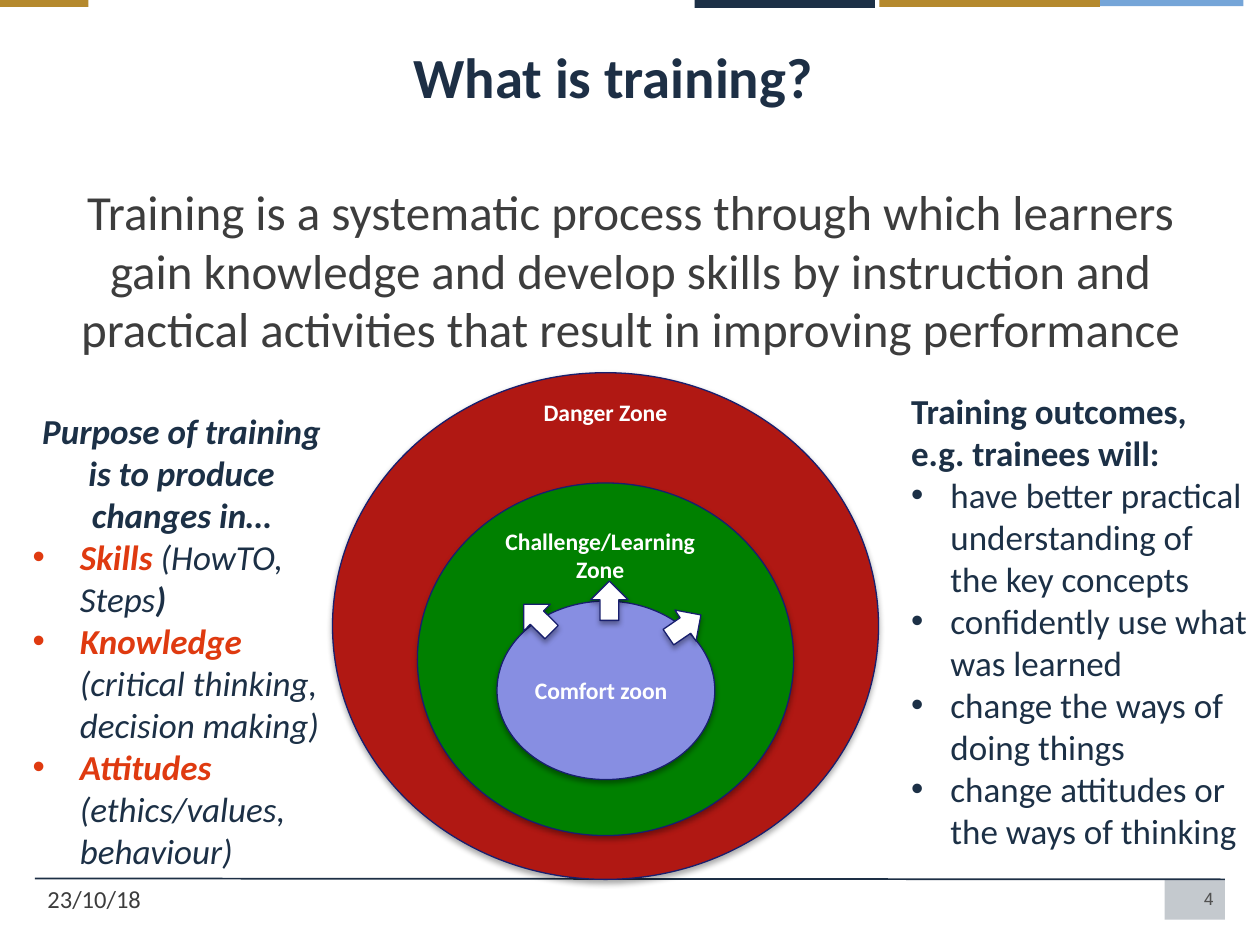
from collections import namedtuple
from dataclasses import dataclass

from lxml import etree
from pptx import Presentation
from pptx.dml.color import RGBColor
from pptx.enum.shapes import MSO_CONNECTOR, MSO_SHAPE
from pptx.enum.text import MSO_ANCHOR, PP_ALIGN
from pptx.oxml.ns import qn
from pptx.util import Pt

RECTANGLE, OVAL, ARROW = MSO_SHAPE.RECTANGLE, MSO_SHAPE.OVAL, MSO_SHAPE.RIGHT_ARROW
STRAIGHT = MSO_CONNECTOR.STRAIGHT
LEFT, CENTER, RIGHT = PP_ALIGN.LEFT, PP_ALIGN.CENTER, PP_ALIGN.RIGHT
TOP, MIDDLE = MSO_ANCHOR.TOP, MSO_ANCHOR.MIDDLE

Box = namedtuple("Box", "left top width height")
Span = namedtuple("Span", "text color bold italic", defaults=(False, False))


@dataclass(frozen=True)
class Theme:
    """Colours, fonts and type sizes of the slide."""
    font: str = "Calibri"
    number_font: str = "Roboto"
    navy: str = "1D2F45"
    ink: str = "1C3046"
    gold: str = "B5892D"
    sky: str = "75A5D8"
    body: str = "3D3D3D"
    gray: str = "515151"
    accent: str = "DF3A10"
    outline: str = "181F6E"
    danger: str = "B01813"
    challenge: str = "008000"
    comfort: str = "878EE2"
    white: str = "FFFFFF"
    title_size: float = 32.4
    body_size: float = 28
    list_size: float = 20
    date_size: float = 14
    label_size: float = 13.5
    number_size: float = 9.8


THEME = Theme()


def rgb(color):
    """Turn a hex string into a colour."""
    return RGBColor.from_string(color)


def within(box, left, top, width, height):
    """Give a box placed relative to the corner of another."""
    return Box(box.left + left, box.top + top, width, height)


def set_alpha(color_element, percent):
    """Make a colour element partly transparent."""
    etree.SubElement(color_element, qn("a:alpha"), val=str(percent * 1000))


def add_shape(page, kind, box, color, outlined=False):
    """Add a filled preset shape, outlined with a soft shadow if asked."""
    shape = page.shapes.add_shape(kind, *map(Pt, box))
    shape.shadow.inherit = False
    shape.fill.solid()
    shape.fill.fore_color.rgb = rgb(color)
    if not outlined:
        shape.line.fill.background()
        return shape
    shape.line.color.rgb = rgb(THEME.outline)
    shape.line.width = Pt(0.75)
    effects = shape._element.spPr.find(qn("a:effectLst"))
    shadow = etree.SubElement(effects, qn("a:outerShdw"), blurRad=str(Pt(3.1)),
                              dist=str(Pt(1.8)), dir="5400000", rotWithShape="0")
    set_alpha(etree.SubElement(shadow, qn("a:srgbClr"), val="000000"), 35)
    return shape


def add_spans(para, spans, size, font=THEME.font):
    """Add formatted runs to a paragraph."""
    for span in spans:
        run = para.add_run()
        run.text = span.text
        run.font.name, run.font.size = font, Pt(size)
        run.font.bold, run.font.italic = span.bold, span.italic
        run.font.color.rgb = rgb(span.color)


def add_text(page, box, spans, size, align=LEFT, anchor=TOP, font=THEME.font):
    """Add a wrapping text box with one paragraph and return its frame."""
    frame = page.shapes.add_textbox(*map(Pt, box)).text_frame
    frame.word_wrap = True
    frame.vertical_anchor = anchor
    para = frame.paragraphs[0]
    para.alignment = align
    add_spans(para, spans, size, font)
    return frame


def add_bullet(para, indent):
    """Give a paragraph a hanging round bullet."""
    props = para._p.get_or_add_pPr()
    props.set("marL", str(Pt(indent)))
    props.set("indent", str(-Pt(indent)))
    etree.SubElement(props, qn("a:buFont"), typeface="Arial")
    etree.SubElement(props, qn("a:buChar"), char="•")


def draw_header(page, box):
    """Draw the coloured bars along the top edge."""
    for left, width, height, color in ((397, 103, 4.5, THEME.ink), (620.5, 90, 3.5, THEME.sky),
                                       (502.5, 126, 4, THEME.gold), (0, 50.5, 4, THEME.gold)):
        add_shape(page, RECTANGLE, within(box, left, 0, width, height), color)


def draw_footer(page, box, date, number):
    """Draw the rule, date and slide number."""
    right = box.left + box.width
    rule = page.shapes.add_connector(STRAIGHT, Pt(right), Pt(box.top + 0.5),
                                     Pt(box.left), Pt(box.top))
    rule.line.color.rgb = rgb(THEME.navy)
    rule.line.width = Pt(1)
    etree.SubElement(rule._element.spPr, qn("a:effectLst"))
    tab = add_shape(page, RECTANGLE, Box(right - 34.5, box.top + 0.5, 34.5, 23), THEME.navy)
    set_alpha(tab._element.spPr.find(qn("a:solidFill"))[0], 26)
    add_text(page, Box(right - 184, box.top + 0.5, 184.5, 22), [Span(number, THEME.gray)],
             THEME.number_size, RIGHT, MIDDLE, THEME.number_font)
    add_text(page, within(box, 0, 0.5, 168, 22), [Span(date, THEME.body)],
             THEME.date_size, anchor=MIDDLE)


def place_title(page, box, text):
    """Move and format the title placeholder."""
    title = page.shapes.title
    title.left, title.top, title.width, title.height = map(Pt, box)
    title.text_frame.vertical_anchor = TOP
    para = title.text_frame.paragraphs[0]
    para.alignment = LEFT
    add_spans(para, [Span(text, THEME.navy, True)], THEME.title_size)


def draw_zones(page, box):
    """Draw the three nested zones and the arrows leading outwards."""
    zones = (
        ("Danger Zone", THEME.danger, (0, 0, 312, 289.5), (96.5, 11, 119, 24)),
        ("Challenge/Learning Zone", THEME.challenge, (48.5, 63, 215, 201.5), (85, 84.5, 136, 40)),
        ("Comfort zoon", THEME.comfort, (94, 130.5, 124.5, 102), (102.5, 169.5, 102, 24)),
    )
    for name, color, oval, label in zones:
        add_shape(page, OVAL, within(box, *oval), color, outlined=True)
        add_text(page, within(box, *label), [Span(name, THEME.white, True)],
                 THEME.label_size, CENTER)
    for left, top, angle in ((190, 134, 325.6), (147, 119.5, 270), (106, 129.5, 224.8)):
        arrow = add_shape(page, ARROW, within(box, left, top, 22.5, 21.5), THEME.white,
                          outlined=True)
        arrow.rotation = angle


def draw_list(page, box, heading, items, indent, align=LEFT):
    """Draw a heading with bulleted items below it."""
    frame = add_text(page, box, [heading], THEME.list_size, align)
    for spans in items:
        para = frame.add_paragraph()
        add_bullet(para, indent)
        add_spans(para, spans, THEME.list_size)


def build():
    """Build the slide and save the deck."""
    deck = Presentation()
    deck.slide_width, deck.slide_height = Pt(720), Pt(540)
    page = deck.slides.add_slide(deck.slide_layouts[5])
    draw_header(page, Box(0, 0, 720, 4.5))
    draw_footer(page, Box(20, 502, 680, 23), "23/10/18", "4")
    place_title(page, Box(229, 20, 453.5, 40), "What is training?")
    definition = ("Training is a systematic process through which learners gain knowledge and "
                  "develop skills by instruction and practical activities that result in "
                  "improving performance")
    add_text(page, Box(20, 100, 680.5, 119), [Span(definition, THEME.body)],
             THEME.body_size, CENTER)
    draw_zones(page, Box(190, 213, 312, 289.5))
    changes = [
        [Span("Skills ", THEME.accent, True, True), Span("(HowTO, Steps", THEME.ink, False, True),
         Span(")", THEME.ink, True, True)],
        [Span("Knowledge ", THEME.accent, True, True),
         Span("(critical thinking, decision making)", THEME.ink, False, True)],
        [Span("Attitudes ", THEME.accent, True, True),
         Span("(ethics/values, behaviour)", THEME.ink, False, True)],
    ]
    draw_list(page, Box(11.5, 230.5, 184.5, 273.5),
              Span("Purpose of training is to produce changes in…", THEME.ink, True, True),
              changes, 27, CENTER)
    outcomes = ("have better practical understanding of the key concepts",
                "confidently use what was learned",
                "change the ways of doing things",
                "change attitudes or the ways of thinking")
    draw_list(page, Box(513.5, 219, 206.5, 273.5),
              Span("Training outcomes, e.g. trainees will:", THEME.ink, True),
              [[Span(text, THEME.ink)] for text in outcomes], 22.5)
    deck.save("out.pptx")


if __name__ == "__main__":
    build()
